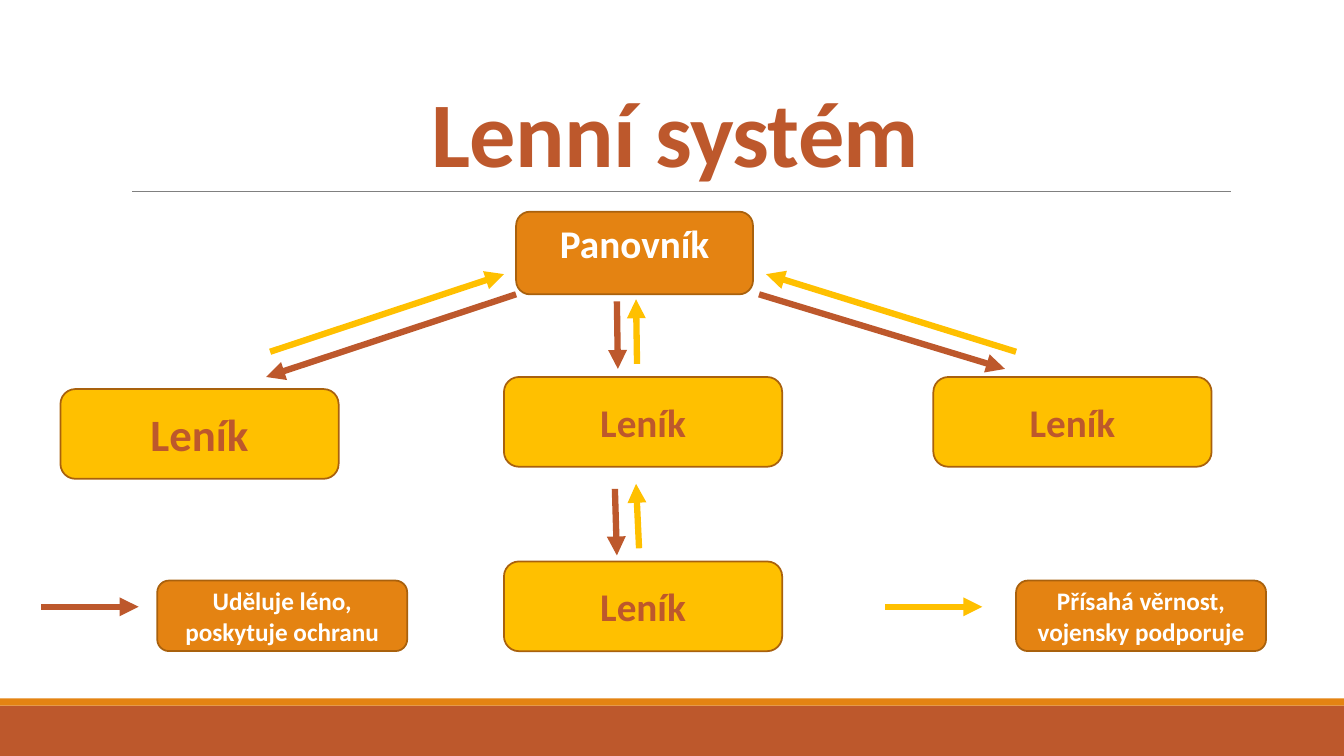
from lxml.etree import SubElement
from pptx import Presentation
from pptx.dml.color import RGBColor
from pptx.enum.shapes import MSO_CONNECTOR as Connector, MSO_SHAPE as Shape
from pptx.enum.text import MSO_ANCHOR as Anchor, PP_ALIGN as Align
from pptx.oxml.ns import qn
from pptx.util import Inches, Pt

RUST, ORANGE, GOLD = "BD582C", "E48312", "FFC000"
BORDER, GREY, WHITE = "A9610D", "808080", "FFFFFF"
COLS, ROWS = 133.33, 75


def color(hex_code):
    return RGBColor.from_string(hex_code)


def cells(*counts):
    """Turn counts of grid cells, a tenth of an inch each, into lengths."""
    return [Inches(count / 10) for count in counts]


def write(frame, text, size=28, ink=RUST, anchor=Anchor.MIDDLE,
          top=0.5, line_spacing=None, tracking=None):
    frame.word_wrap = True
    frame.vertical_anchor = anchor
    frame.margin_top, = cells(top)
    paragraph = frame.paragraphs[0]
    paragraph.alignment = Align.CENTER
    if line_spacing:
        paragraph.line_spacing = line_spacing
    run = paragraph.add_run()
    run.text = text
    run.font.name, run.font.size, run.font.bold = "Calibri", Pt(size), True
    run.font.color.rgb = color(ink)
    if tracking:
        run._r.get_or_add_rPr().set("spc", str(round(tracking * 100)))


class Diagram:
    """Draws on one slide, with places given in columns and rows."""

    border_width, arrow_width = 1.25, 4.5

    def __init__(self, slide):
        self.shapes = slide.shapes

    def band(self, top, height, fill):
        self.block(Shape.RECTANGLE, (0, top, COLS, height), fill).line.fill.background()

    def block(self, kind, place, fill):
        block = self.shapes.add_shape(kind, *cells(*place))
        block.shadow.inherit = False
        block.fill.solid()
        block.fill.fore_color.rgb = color(fill)
        return block

    def box(self, place, text, fill=GOLD, **text_format):
        box = self.block(Shape.ROUNDED_RECTANGLE, place, fill)
        box.line.color.rgb = color(BORDER)
        box.line.width = Pt(self.border_width)
        write(box.text_frame, text, **text_format)

    def title(self, place, text, **text_format):
        write(self.shapes.add_textbox(*cells(*place)).text_frame, text, **text_format)

    def rule(self, start, end, ink, width):
        rule = self.shapes.add_connector(Connector.STRAIGHT, *cells(*start, *end))
        rule.line.color.rgb = color(ink)
        rule.line.width = Pt(width)
        SubElement(rule._element.spPr, qn("a:effectLst"))
        return rule

    def arrow(self, start, end, ink):
        arrow = self.rule(start, end, ink, self.arrow_width)
        SubElement(arrow.line._get_or_add_ln(), qn("a:tailEnd"), type="triangle")


def main():
    deck = Presentation()
    deck.slide_width, deck.slide_height = cells(COLS, ROWS)
    diagram = Diagram(deck.slides.add_slide(deck.slide_layouts[6]))

    diagram.band(70, 5, RUST)
    diagram.band(69.3, 0.7, ORANGE)
    diagram.rule((13.1, 19), (122.1, 19), GREY, 0.5)
    diagram.title((12, 3.1, 110, 15.9), "Lenní systém", size=66,
                  anchor=Anchor.BOTTOM, line_spacing=0.85, tracking=-0.5)

    diagram.box((51.2, 21, 23.5, 8.2), "Panovník", fill=ORANGE, ink=WHITE,
                anchor=Anchor.TOP, top=0.4)
    for left, top, size in ((6, 38.6, 32), (50, 37.4, 28),
                            (92.6, 37.4, 28), (50, 55.7, 28)):
        diagram.box((left, top, 27.6, 8.9), "Leník", size=size)

    grants = (((61.2, 29.9), (61.3, 36.6)), ((51.2, 29.2), (26.4, 37.4)),
              ((75.3, 29.2), (99.7, 36.6)), ((61, 48.5), (61.2, 55.1)))
    oaths = (((63.2, 36.1), (63.1, 29.7)), ((26.8, 34.9), (50, 27.2)),
             ((100.8, 34.9), (76, 27.2)), ((63.4, 54.4), (63.1, 48)))
    for ink, links in ((RUST, grants), (GOLD, oaths)):
        for start, end in links:
            diagram.arrow(start, end, ink)

    legend = ((4.1, 15.6, RUST, "Uděluje léno, poskytuje ochranu"),
              (87.8, 100.8, GOLD, "Přísahá věrnost, vojensky podporuje"))
    for arrow_left, box_left, ink, meaning in legend:
        diagram.arrow((arrow_left, 60.2), (arrow_left + 9.65, 60.2), ink)
        diagram.box((box_left, 57.6, 24.8, 7), meaning, fill=ORANGE,
                    size=18, ink=WHITE)

    deck.save("out.pptx")


if __name__ == "__main__":
    main()
